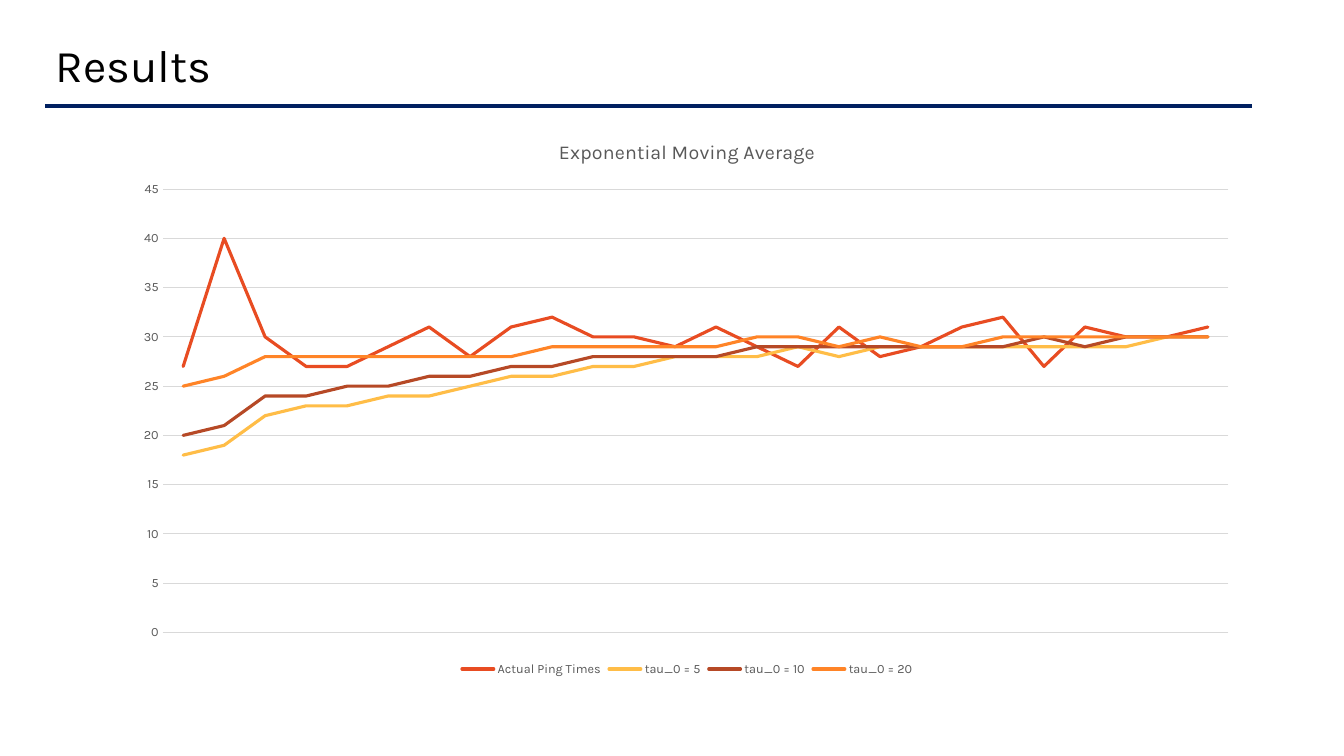
from lxml.etree import SubElement
from pptx import Presentation
from pptx.chart.data import CategoryChartData
from pptx.dml.color import RGBColor
from pptx.enum.chart import XL_CHART_TYPE, XL_LEGEND_POSITION, XL_TICK_LABEL_POSITION, XL_TICK_MARK
from pptx.enum.shapes import MSO_CONNECTOR
from pptx.enum.text import MSO_ANCHOR
from pptx.oxml.ns import qn
from pptx.util import Inches, Pt

BLACK = RGBColor(0x00, 0x00, 0x00)
NAVY = RGBColor(0x00, 0x20, 0x60)
GRAY = RGBColor(0x59, 0x59, 0x59)
LIGHT_GRAY = RGBColor(0xD9, 0xD9, 0xD9)
RED = RGBColor(0xE8, 0x4C, 0x22)
YELLOW = RGBColor(0xFF, 0xBD, 0x47)
BROWN = RGBColor(0xB6, 0x49, 0x26)
ORANGE = RGBColor(0xFF, 0x84, 0x27)

PING_SERIES = [
    ("Actual Ping Times", RED,
     [27, 40, 30, 27, 27, 29, 31, 28, 31, 32, 30, 30, 29,
      31, 29, 27, 31, 28, 29, 31, 32, 27, 31, 30, 30, 31]),
    ("tau_0 = 5", YELLOW,
     [18, 19, 22, 23, 23, 24, 24, 25, 26, 26, 27, 27, 28,
      28, 28, 29, 28, 29, 29, 29, 29, 29, 29, 29, 30, 30]),
    ("tau_0 = 10", BROWN,
     [20, 21, 24, 24, 25, 25, 26, 26, 27, 27, 28, 28, 28,
      28, 29, 29, 29, 29, 29, 29, 29, 30, 29, 30, 30, 30]),
    ("tau_0 = 20", ORANGE,
     [25, 26, 28, 28, 28, 28, 28, 28, 28, 29, 29, 29, 29,
      29, 30, 30, 29, 30, 29, 29, 30, 30, 30, 30, 30, 30]),
]


class SlideBuilder:
    font_name = "Karla"

    def __init__(self, slide):
        self.slide = slide

    def style_font(self, font, size, color):
        font.name = self.font_name
        font.size = Pt(size)
        font.bold = False
        font.color.rgb = color

    def style_line(self, line, color, width):
        line.color.rgb = color
        line.width = Pt(width)

    def add_title(self, text, left, top, width, height):
        shape = self.slide.shapes.add_textbox(Inches(left), Inches(top), Inches(width), Inches(height))
        frame = shape.text_frame
        frame.word_wrap = True
        frame.vertical_anchor = MSO_ANCHOR.MIDDLE
        paragraph = frame.paragraphs[0]
        paragraph.line_spacing = 0.9
        run = paragraph.add_run()
        run.text = text
        self.style_font(run.font, 32.4, BLACK)

    def add_rule(self, left, top, right):
        connector = self.slide.shapes.add_connector(
            MSO_CONNECTOR.STRAIGHT, Inches(left), Inches(top), Inches(right), Inches(top))
        self.style_line(connector.line, NAVY, 2.5)
        SubElement(connector._element.spPr, qn("a:effectLst"))

    def add_line_chart(self, title, series_list, left, top, width, height):
        chart_data = CategoryChartData()
        chart_data.categories = [str(number + 1) for number in range(len(series_list[0][2]))]
        for name, color, values in series_list:
            chart_data.add_series(name, values)
        chart = self.slide.shapes.add_chart(
            XL_CHART_TYPE.LINE, Inches(left), Inches(top), Inches(width), Inches(height), chart_data).chart
        self.style_font(chart.font, 10, BLACK)

        chart.has_title = True
        run = chart.chart_title.text_frame.paragraphs[0].add_run()
        run.text = title
        self.style_font(run.font, 14, GRAY)
        chart.chart_title.include_in_layout = False

        chart.has_legend = True
        chart.legend.position = XL_LEGEND_POSITION.BOTTOM
        chart.legend.include_in_layout = False
        self.style_font(chart.legend.font, 9, GRAY)

        self.style_axes(chart)
        self.place_plot(chart, x=0.036, y=0.125, w=0.943, h=0.79)

        plot = chart.plots[0]
        plot.vary_by_categories = False
        for series, (name, color, values) in zip(plot.series, series_list):
            series.smooth = False
            self.style_line(series.format.line, color, 2.25)
            series.format.line._ln.set("cap", "rnd")

    def style_axes(self, chart):
        for axis in (chart.category_axis, chart.value_axis):
            axis.major_tick_mark = XL_TICK_MARK.NONE
            axis.minor_tick_mark = XL_TICK_MARK.NONE
            self.style_font(axis.tick_labels.font, 9, GRAY)
        chart.category_axis.tick_label_position = XL_TICK_LABEL_POSITION.NONE
        self.style_line(chart.category_axis.format.line, LIGHT_GRAY, 0.75)
        value_axis = chart.value_axis
        value_axis.minimum_scale = 0
        value_axis.maximum_scale = 45
        value_axis.major_unit = 5
        value_axis.format.line.fill.background()
        self.style_line(value_axis.major_gridlines.format.line, LIGHT_GRAY, 0.75)

    def place_plot(self, chart, **fractions):
        plot_area = chart._chartSpace.chart.plotArea
        layout = plot_area.find(qn("c:layout"))
        if layout is None:
            layout = SubElement(plot_area, qn("c:layout"))
            plot_area.insert(0, layout)
        manual = SubElement(layout, qn("c:manualLayout"))
        settings = {"layoutTarget": "inner", "xMode": "edge", "yMode": "edge", **fractions}
        for name, value in settings.items():
            SubElement(manual, qn(f"c:{name}")).set("val", str(value))


def main():
    presentation = Presentation()
    presentation.slide_width = Inches(13.33)
    presentation.slide_height = Inches(7.5)
    builder = SlideBuilder(presentation.slides.add_slide(presentation.slide_layouts[6]))
    builder.add_rule(0.45, 1.05, 12.42)
    builder.add_title("Results", 0.45, 0.4, 11.97, 0.54)
    builder.add_line_chart("Exponential Moving Average", PING_SERIES, 1.21, 1.18, 11.21, 5.57)
    presentation.save("out.pptx")


if __name__ == "__main__":
    main()
